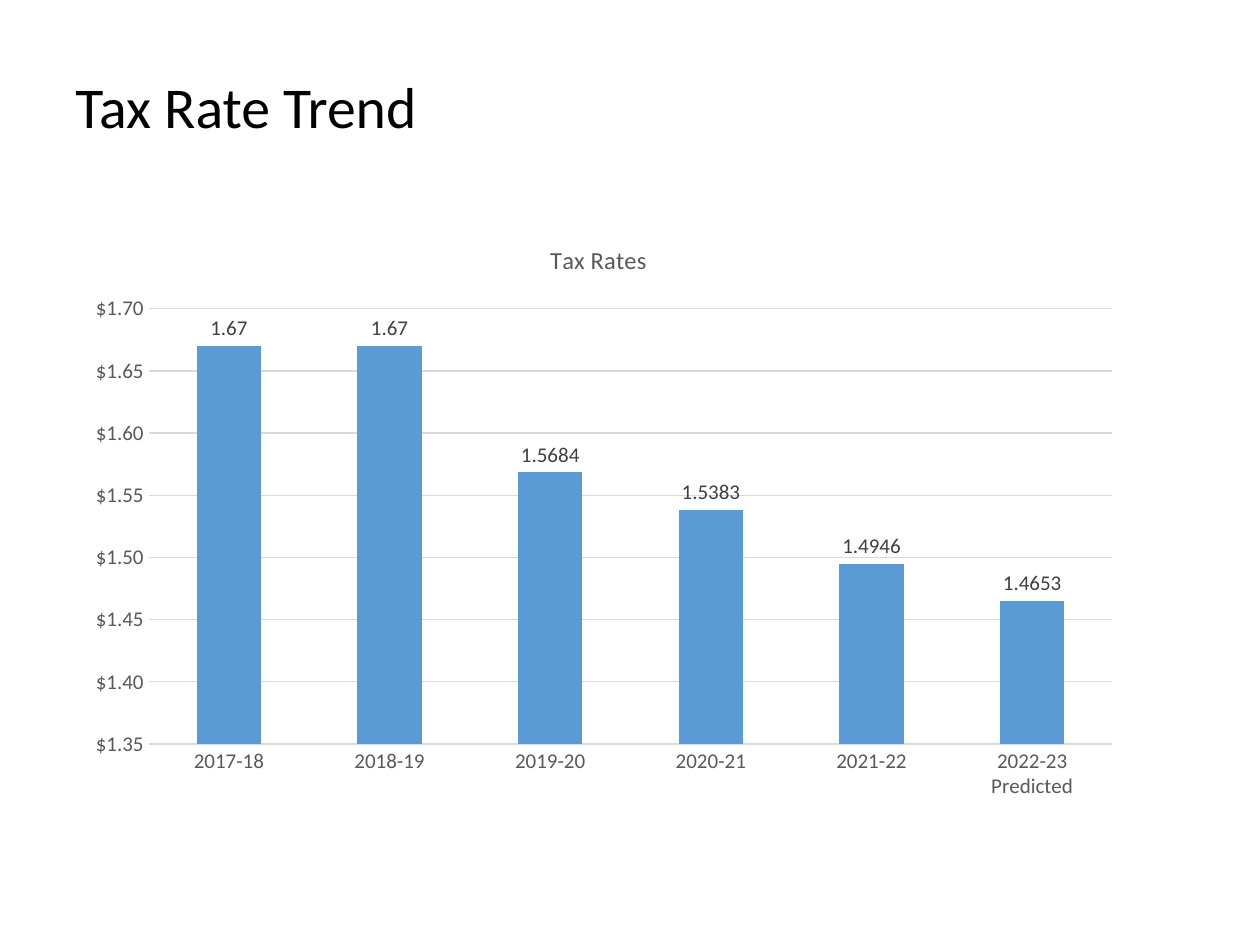
from dataclasses import dataclass

from lxml import etree
from pptx import Presentation, util as u
from pptx.chart.data import CategoryChartData
from pptx.dml.color import RGBColor
from pptx.enum import chart as ch, text

WIDE, HIGH = 10, 7.5
FACE = "Calibri"
GREY, RULE, BLUE = "595959", "D9D9D9", "5B9BD5"
RATES = {
    "2017-18": 1.67,
    "2018-19": 1.67,
    "2019-20": 1.5684,
    "2020-21": 1.5383,
    "2021-22": 1.4946,
    "2022-23 Predicted": 1.4653,
}


@dataclass
class Box:
    """Area given as shares of its parent."""
    x: float
    y: float
    w: float
    h: float

    def place(self) -> list:
        """Return the slide lengths of the area."""
        return [u.Inches(self.x * WIDE), u.Inches(self.y * HIGH),
                u.Inches(self.w * WIDE), u.Inches(self.h * HIGH)]


def tint(code: str) -> RGBColor:
    """Turn a hex string into a colour."""
    return RGBColor.from_string(code)


def put(item, values: dict) -> None:
    """Set each named attribute of an object."""
    for name, value in values.items():
        setattr(item, name, value)


def style(font, size: float, code: str) -> None:
    """Set face, size, weight and colour of a font."""
    put(font, {"name": FACE, "size": u.Pt(size), "bold": False})
    font.color.rgb = tint(code)


def rule(line) -> None:
    """Draw a thin grey line."""
    line.width = u.Pt(0.75)
    line.color.rgb = tint(RULE)


def head(slide, words: str, box: Box) -> None:
    """Write the slide heading."""
    frame = slide.shapes.add_textbox(*box.place()).text_frame
    put(frame, {"word_wrap": True, "vertical_anchor": text.MSO_ANCHOR.MIDDLE})
    para = frame.paragraphs[0]
    para.line_spacing = 0.9
    run = para.add_run()
    run.text = words
    style(run.font, 33, "000000")


def fix(chart, box: Box) -> None:
    """Pin the inner plot area to shares of the chart."""
    area = chart.plots[0]._element.getparent()
    for old in area.findall("{*}layout"):
        area.remove(old)
    space = "{%s}" % etree.QName(area).namespace
    layout = etree.Element(space + "layout")
    manual = etree.SubElement(layout, space + "manualLayout")
    parts = {"layoutTarget": "inner", "xMode": "edge", "yMode": "edge",
             "x": box.x, "y": box.y, "w": box.w, "h": box.h}
    for name, value in parts.items():
        etree.SubElement(manual, space + name).set("val", str(value))
    area.insert(0, layout)


def bars(slide, box: Box, inner: Box) -> None:
    """Draw the column chart of tax rates."""
    data = CategoryChartData()
    data.categories = list(RATES)
    data.add_series("Series 1", list(RATES.values()))
    kind = ch.XL_CHART_TYPE.COLUMN_CLUSTERED
    chart = slide.shapes.add_chart(kind, *box.place(), data).chart
    put(chart, {"has_legend": False, "has_title": True})
    style(chart.font, 12, "000000")
    run = chart.chart_title.text_frame.paragraphs[0].add_run()
    run.text = "Tax Rates"
    style(run.font, 14, GREY)

    years, rates = chart.category_axis, chart.value_axis
    for axis in (years, rates):
        put(axis, {"major_tick_mark": ch.XL_TICK_MARK.NONE,
                   "minor_tick_mark": ch.XL_TICK_MARK.NONE})
        style(axis.tick_labels.font, 12, GREY)
    years.has_major_gridlines = False
    rule(years.format.line)
    put(rates, {"minimum_scale": 1.35, "maximum_scale": 1.7,
                "major_unit": 0.05, "has_major_gridlines": True})
    put(rates.tick_labels, {"number_format": '"$"0.00',
                            "number_format_is_linked": False})
    rates.format.line.fill.background()
    rule(rates.major_gridlines.format.line)

    plot = chart.plots[0]
    put(plot, {"gap_width": 150, "vary_by_categories": False,
               "has_data_labels": True})
    fill = plot.series[0].format.fill
    fill.solid()
    fill.fore_color.rgb = tint(BLUE)
    put(plot.data_labels, {"show_value": True,
                           "position": ch.XL_LABEL_POSITION.OUTSIDE_END})
    style(plot.data_labels.font, 12, "404040")
    fix(chart, inner)


def main() -> None:
    """Build and save the slide."""
    deck = Presentation()
    put(deck, {"slide_width": u.Inches(WIDE), "slide_height": u.Inches(HIGH)})
    slide = deck.slides.add_slide(deck.slide_layouts[6])
    head(slide, "Tax Rate Trend", Box(0.05, 0.5 / HIGH, 0.895, 0.1))
    bars(slide, Box(0.05, 1.75 / HIGH, 0.85, 4.67 / HIGH),
         Box(0.08, 0.15, 0.9, 0.74))
    deck.save("out.pptx")


if __name__ == "__main__":
    main()
